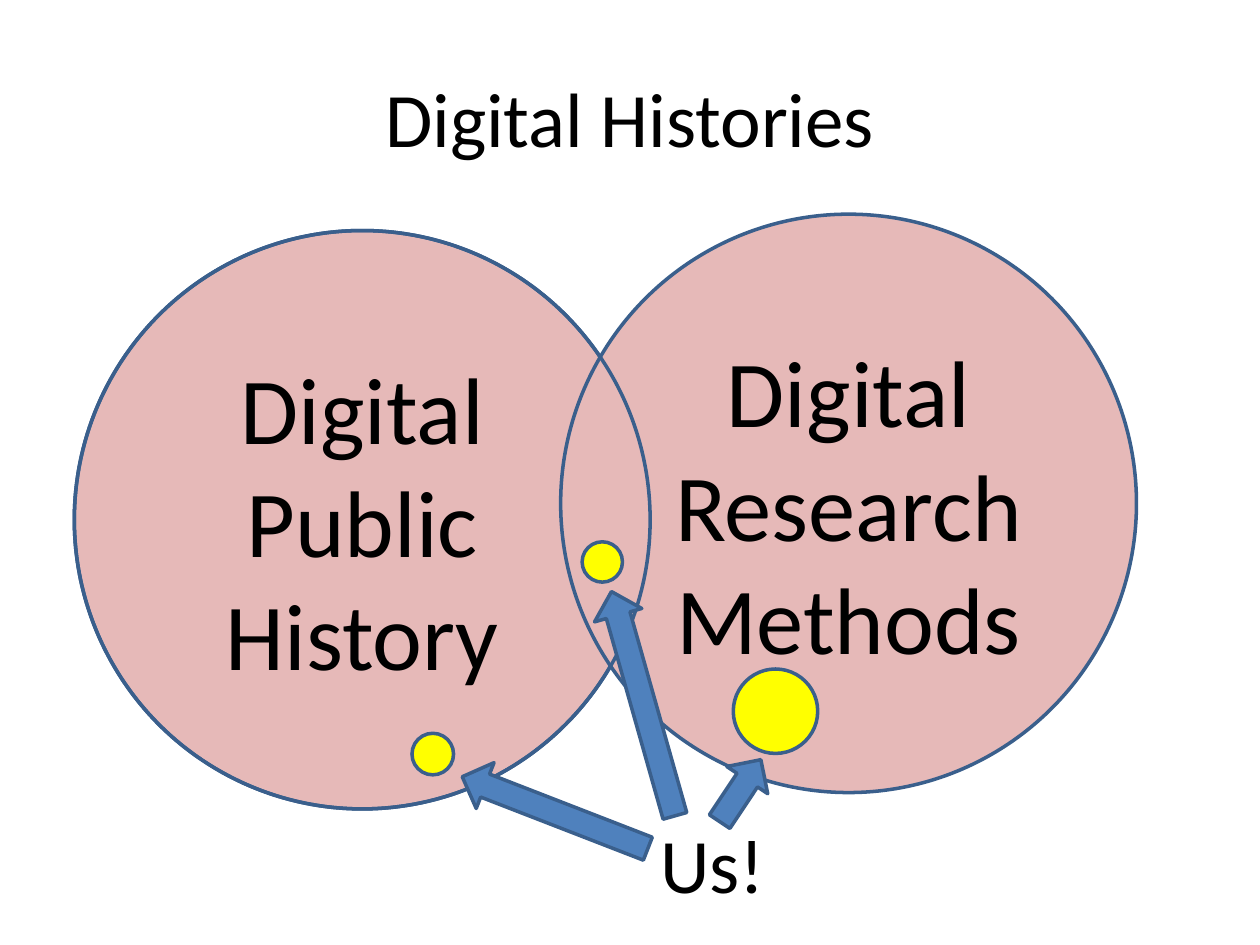
from dataclasses import dataclass

from pptx import Presentation
from pptx.dml.color import RGBColor
from pptx.enum.shapes import MSO_SHAPE
from pptx.enum.text import MSO_ANCHOR, PP_ALIGN
from pptx.util import Inches, Pt

ELLIPSE, UP_ARROW = MSO_SHAPE.OVAL, MSO_SHAPE.UP_ARROW
LEFT, CENTER = PP_ALIGN.LEFT, PP_ALIGN.CENTER
TOP, MIDDLE = MSO_ANCHOR.TOP, MSO_ANCHOR.MIDDLE

# The slide is a grid of 100 columns by 75 rows
COLUMNS, ROWS = 100, 75


@dataclass(frozen=True)
class Theme:
    font: str = "Calibri"
    text: RGBColor = RGBColor(0x00, 0x00, 0x00)
    field: RGBColor = RGBColor(0xE6, 0xB9, 0xB8)
    marker: RGBColor = RGBColor(0xFF, 0xFF, 0x00)
    arrow: RGBColor = RGBColor(0x4F, 0x81, 0xBD)
    outline: RGBColor = RGBColor(0x3A, 0x5F, 0x8C)
    outline_width: float = 2
    heading_size: int = 44
    field_size: int = 54


class VennSlide:
    def __init__(self, deck, theme):
        self.theme = theme
        self.column = deck.slide_width / COLUMNS
        self.row = deck.slide_height / ROWS
        self.slide = deck.slides.add_slide(deck.slide_layouts[6])

    def place(self, left, top, width, height):
        return (round(left * self.column), round(top * self.row),
                round(width * self.column), round(height * self.row))

    def set_text(self, shape, lines, size, align, anchor):
        frame = shape.text_frame
        frame.word_wrap = True
        frame.vertical_anchor = anchor
        frame.text = "\n".join(lines)
        for paragraph in frame.paragraphs:
            paragraph.alignment = align
            paragraph.font.name = self.theme.font
            paragraph.font.size = Pt(size)
            paragraph.font.color.rgb = self.theme.text

    def label(self, text, box, align=LEFT, anchor=TOP):
        shape = self.slide.shapes.add_textbox(*self.place(*box))
        self.set_text(shape, [text], self.theme.heading_size, align, anchor)

    def outlined(self, kind, box, fill=None):
        shape = self.slide.shapes.add_shape(kind, *self.place(*box))
        shape.shadow.inherit = False
        if fill is None:
            shape.fill.background()
        else:
            shape.fill.solid()
            shape.fill.fore_color.rgb = fill
        shape.line.color.rgb = self.theme.outline
        shape.line.width = Pt(self.theme.outline_width)
        return shape

    def circle(self, box, fill=None, lines=()):
        shape = self.outlined(ELLIPSE, box, fill)
        if lines:
            self.set_text(shape, lines, self.theme.field_size, CENTER, MIDDLE)

    def marker(self, left, top, diameter):
        self.circle((left, top, diameter, diameter), self.theme.marker)

    def arrow(self, left, top, length, angle):
        box = (left, top, 3.9, length)
        self.outlined(UP_ARROW, box, self.theme.arrow).rotation = angle


def main():
    deck = Presentation()
    deck.slide_width, deck.slide_height = Inches(10), Inches(7.5)
    theme = Theme()
    venn = VennSlide(deck, theme)

    venn.label("Digital Histories", (5, 3, 90, 12.5), CENTER, MIDDLE)

    # Overlapping fields; the left outline is drawn again over the overlap
    public_history = (5.9, 18.3, 45.7, 45.9)
    research_methods = (44.5, 17, 45.7, 45.9)
    venn.circle(public_history, theme.field)
    venn.circle(research_methods, theme.field, ["Digital Research Methods"])
    venn.circle(public_history, lines=["Digital", "Public History"])

    # Our place in each field and in the overlap
    venn.label("Us!", (51.4, 64.3, 13.4, 8.4))
    for spot in ((32.7, 58.2, 3.3), (58.2, 53.1, 6.7), (46.2, 43, 3.2)):
        venn.marker(*spot)

    # Arrows from "Us!" to the markers: left, top, length, angle
    for pointer in ((42.1, 56.6, 15.8, 291.2),
                    (49.1, 46.6, 18.5, 344.2),
                    (56.8, 59.8, 5.9, 33.6)):
        venn.arrow(*pointer)

    deck.save("out.pptx")


if __name__ == "__main__":
    main()
